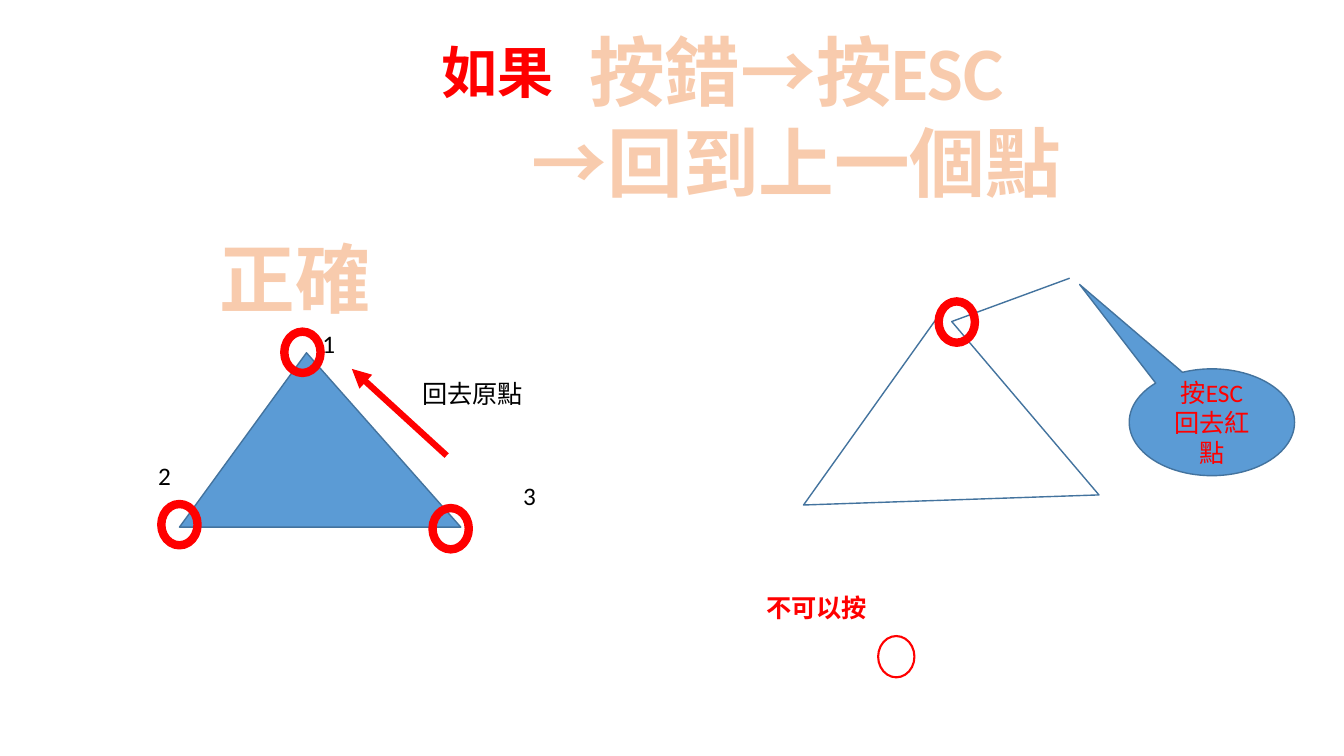
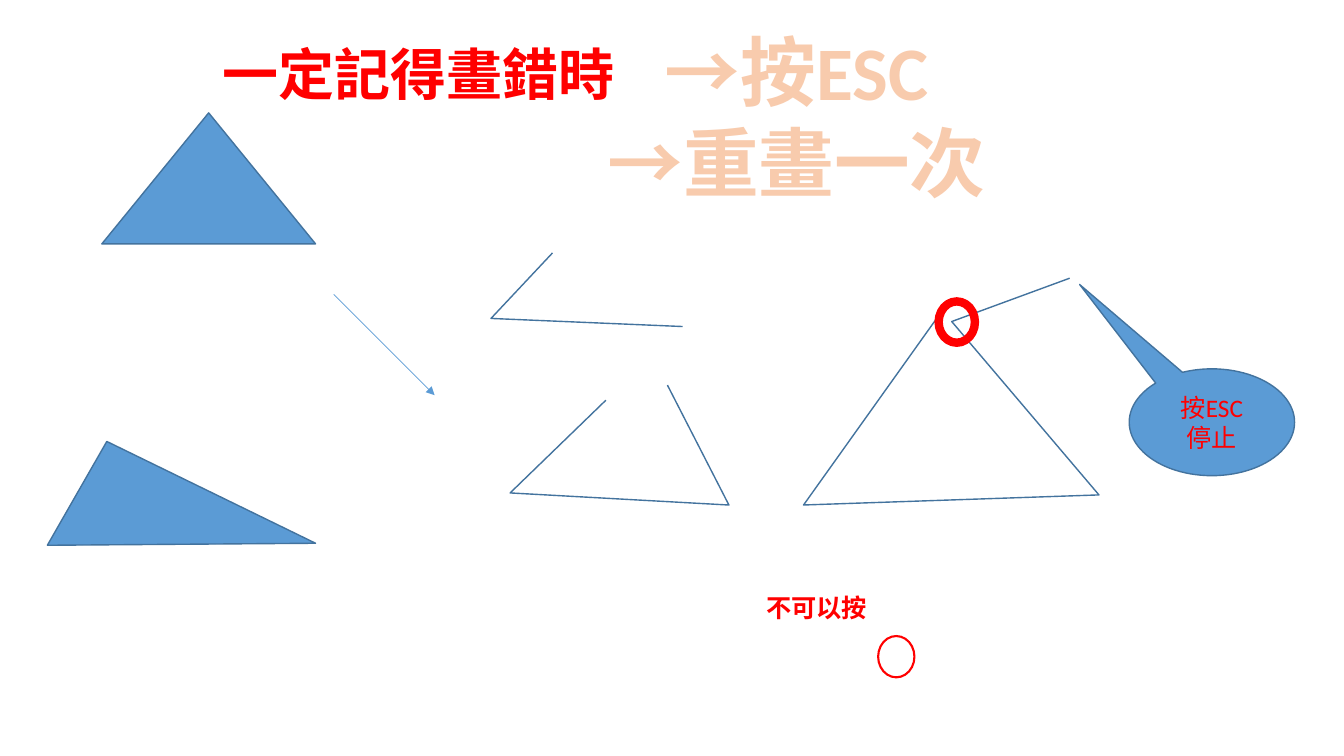
from dataclasses import dataclass

from lxml import etree
from pptx import Presentation
from pptx.dml.color import RGBColor
from pptx.enum.shapes import MSO_CONNECTOR, MSO_SHAPE
from pptx.enum.text import MSO_ANCHOR, MSO_AUTO_SIZE, PP_ALIGN
from pptx.oxml.ns import qn
from pptx.util import Pt

PX = 9144  # EMU in one px, 100 px to the inch
OVAL, TRIANGLE = MSO_SHAPE.OVAL, MSO_SHAPE.ISOSCELES_TRIANGLE
CALLOUT = MSO_SHAPE.OVAL_CALLOUT
LEFT, CENTER = PP_ALIGN.LEFT, PP_ALIGN.CENTER
MIDDLE = MSO_ANCHOR.MIDDLE
FIT_SHAPE = MSO_AUTO_SIZE.SHAPE_TO_FIT_TEXT
STRAIGHT = MSO_CONNECTOR.STRAIGHT

COLORS = {
    "blue": "5B9BD5",
    "edge": "43739E",
    "red": "FF0000",
    "peach": "F8CBAD",
    "orange": "ED7D31",
    "black": "000000",
}

HEADLINE_BOX = (515, 20, 550, 192)
RING_SIZE = (36, 41)
WRONG_TRIANGLE = [(934, 309), (797, 501), (1090, 491), (944, 319), (1061, 276)]


@dataclass
class Label:
    text: str
    box: tuple[int, int, int, int]
    color: str = "black"
    size: int = 18
    font: str = "Calibri"
    bold: bool = False


@dataclass
class Outline:
    points: list[tuple[int, int]]
    closed: bool = False


@dataclass
class Arrow:
    start: tuple[int, int]
    end: tuple[int, int]
    color: str
    width: float


def rgb(name: str) -> RGBColor:
    return RGBColor.from_string(COLORS[name])


def emu(*lengths: int) -> list[int]:
    return [length * PX for length in lengths]


def style(sp, fill: str | None = None, line: str = "edge", width: float = 1) -> None:
    sp.shadow.inherit = False
    if fill:
        sp.fill.solid()
        sp.fill.fore_color.rgb = rgb(fill)
    else:
        sp.fill.background()
    sp.line.color.rgb = rgb(line)
    sp.line.width = Pt(width)


def outline_run(r, color: str, width: float) -> None:
    """Give the letters of a run a coloured contour."""
    ln = etree.Element(qn("a:ln"), w=str(Pt(width)))
    fill = etree.SubElement(ln, qn("a:solidFill"))
    etree.SubElement(fill, qn("a:srgbClr"), val=COLORS[color])
    r.font._element.insert(0, ln)


def write(tf, text: str, *, size: int = 18, color: str = "black",
          font: str = "Calibri", bold: bool = False, align=LEFT,
          contour: str | None = None) -> None:
    """Fill a text frame: a newline starts a paragraph, \\v breaks a line."""
    tf.text = text
    for p in tf.paragraphs:
        p.alignment = align
        for r in p.runs:
            r.font.size = Pt(size)
            r.font.name = font
            r.font.bold = bold
            r.font.color.rgb = rgb(color)
            if contour:
                outline_run(r, contour, 1.75)


def add_text(slide, box: tuple[int, int, int, int], text: str, *,
             wrap: bool = False, **text_format) -> None:
    tf = slide.shapes.add_textbox(*emu(*box)).text_frame
    tf.word_wrap = wrap
    tf.auto_size = FIT_SHAPE
    write(tf, text, **text_format)


def add_label(slide, label: Label) -> None:
    add_text(slide, label.box, label.text, size=label.size, color=label.color,
             font=label.font, bold=label.bold)


def add_fancy(slide, box: tuple[int, int, int, int], text: str, wrap: bool) -> None:
    add_text(slide, box, text, wrap=wrap, size=54, color="peach", bold=True,
             align=CENTER, contour="orange")


def add_outline(slide, outline: Outline) -> None:
    """Closed outlines are filled, open ones are lines only."""
    first, *others = outline.points
    builder = slide.shapes.build_freeform(*first, scale=PX)
    builder.add_line_segments(others, close=outline.closed)
    style(builder.convert_to_shape(), fill="blue" if outline.closed else None)


def add_ring(slide, left: int, top: int, width: float = 6) -> None:
    sp = slide.shapes.add_shape(OVAL, *emu(left, top, *RING_SIZE))
    style(sp, line="red", width=width)


def add_arrow(slide, arrow: Arrow) -> None:
    sp = slide.shapes.add_connector(STRAIGHT, *emu(*arrow.start, *arrow.end))
    sp.line.color.rgb = rgb(arrow.color)
    sp.line.width = Pt(arrow.width)
    etree.SubElement(sp.line._get_or_add_ln(), qn("a:tailEnd"), type="triangle")
    etree.SubElement(sp._element.spPr, qn("a:effectLst"))


def add_callout(slide, text: str) -> None:
    sp = slide.shapes.add_shape(CALLOUT, *emu(1120, 366, 164, 106))
    sp.adjustments[0], sp.adjustments[1] = -0.8, -1.29
    style(sp, fill="blue")
    sp.text_frame.vertical_anchor = MIDDLE
    sp.text_frame.word_wrap = True
    write(sp.text_frame, text, color="red", align=CENTER)


def add_lesson(prs, headline: str, prefix: Label, advice: str):
    """Add a slide with the headline and the wrongly drawn triangle."""
    slide = prs.slides.add_slide(prs.slide_layouts[6])
    add_outline(slide, Outline(WRONG_TRIANGLE))
    add_fancy(slide, HEADLINE_BOX, headline, wrap=True)
    add_ring(slide, 931, 299)
    add_callout(slide, advice)
    add_label(slide, prefix)
    add_label(slide, Label("不可以按", (750, 583, 121, 40), "red", bold=True))
    add_ring(slide, 871, 631, width=1.5)
    return slide


def step_back_slide(prs) -> None:
    prefix = Label("如果", (428, 32, 132, 77), "red", 40, "Arial", True)
    slide = add_lesson(prs, "按錯→按ESC\n→回到上一個點", prefix, "按ESC\v回去紅點")
    add_outline(slide, Outline([(304, 350), (178, 523), (457, 523)], closed=True))
    add_fancy(slide, (207, 225, 172, 101), "正確", wrap=False)
    for corner in [(282, 329), (160, 500), (429, 504)]:
        add_ring(slide, *corner)
    for label in [
        Label("1", (310, 321, 33, 40)),
        Label("2", (147, 452, 33, 40)),
        Label("3", (509, 472, 33, 40)),
        Label("回去原點", (409, 370, 121, 40)),
    ]:
        add_label(slide, label)
    add_arrow(slide, Arrow((443, 452), (349, 366), "red", 4.5))


def redraw_slide(prs) -> None:
    prefix = Label("一定記得畫錯時", (211, 34, 413, 77), "red", 40, "Arial", True)
    slide = add_lesson(prs, "→按ESC\n→重畫一次", prefix, "按ESC\v停止")
    add_arrow(slide, Arrow((331, 292), (431, 392), "blue", 0.5))
    style(slide.shapes.add_shape(TRIANGLE, *emu(101, 112, 212, 130)), fill="blue")
    for outline in [
        Outline([(106, 438), (47, 541), (313, 539)], closed=True),
        Outline([(548, 251), (487, 316), (677, 324)]),
        Outline([(601, 397), (506, 489), (723, 501), (662, 382)]),
    ]:
        add_outline(slide, outline)


def main() -> None:
    prs = Presentation()
    prs.slide_width, prs.slide_height = emu(1333, 750)
    step_back_slide(prs)
    redraw_slide(prs)
    prs.save("out.pptx")


if __name__ == "__main__":
    main()
